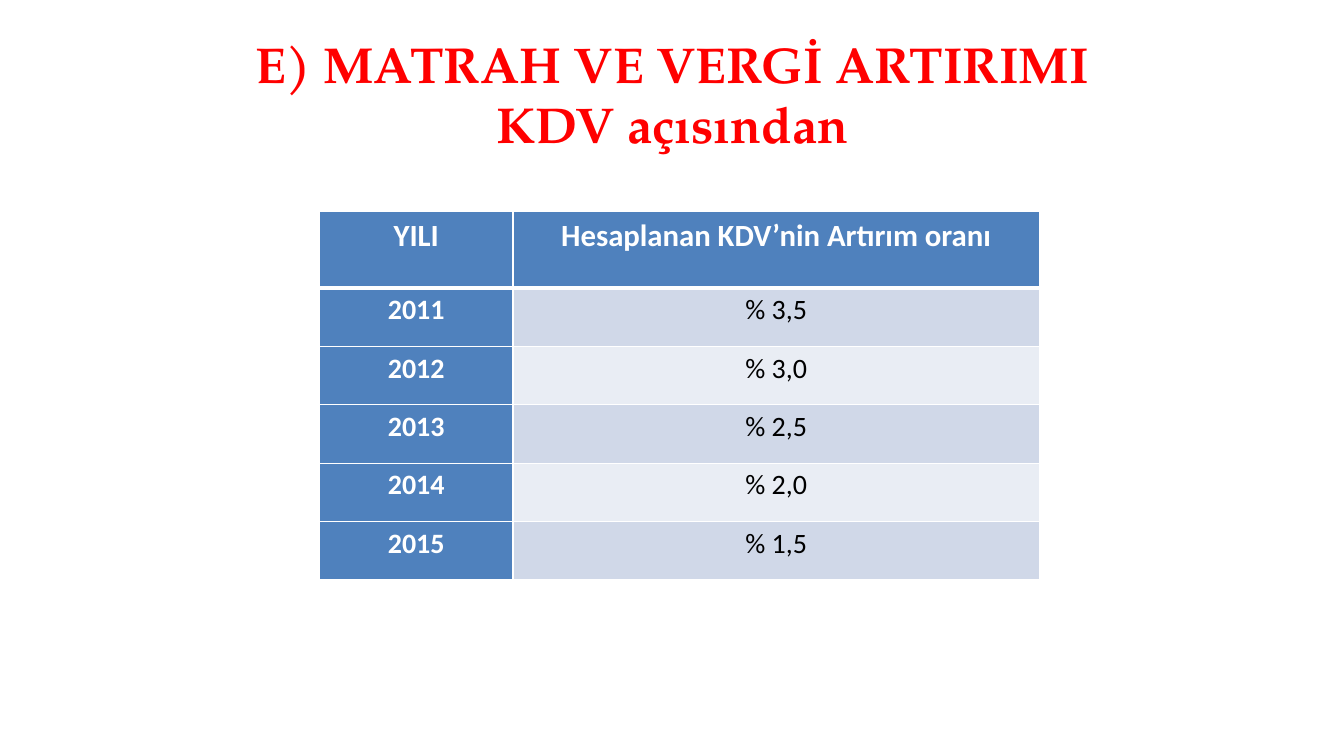
import pptx
import pptx.dml.color
import pptx.enum.text
import pptx.oxml
import pptx.oxml.ns
import pptx.util

Cm = pptx.util.Cm
Pt = pptx.util.Pt
CENTER = pptx.enum.text.PP_ALIGN.CENTER
WHITE, BLUE = "FFFFFF", "4F81BD"
BANDS = ["D0D8E8", "E9EDF4"]


def color(code):
    return pptx.dml.color.RGBColor.from_string(code)


def border(cell, side, width):
    """Draw a white line on one side (L, R, T or B); call before setting the fill."""
    cell._tc.get_or_add_tcPr().append(pptx.oxml.parse_xml(
        f'<a:ln{side} {pptx.oxml.ns.nsdecls("a")} w="{Pt(width)}">'
        f'<a:solidFill><a:srgbClr val="{WHITE}"/></a:solidFill></a:ln{side}>'))


deck = pptx.Presentation()
deck.slide_width, deck.slide_height = Cm(33.87), Cm(19.05)
slide = deck.slides.add_slide(deck.slide_layouts[5])

title = slide.shapes.title
title.left, title.top, title.width, title.height = Cm(1.7), Cm(0.76), Cm(30.48), Cm(3.18)
title.text_frame.vertical_anchor = pptx.enum.text.MSO_ANCHOR.MIDDLE
title.text_frame.text = "E) MATRAH VE VERGİ ARTIRIMI\vKDV açısından"
head = title.text_frame.paragraphs[0]
head.alignment = CENTER
head.font.name, head.font.size, head.font.bold = "TeX Gyre Pagella", Pt(36), True
head.font.color.rgb = color("FF0000")

rates = [
    ("YILI", "Hesaplanan KDV’nin Artırım oranı"),
    ("2011", "% 3,5"),
    ("2012", "% 3,0"),
    ("2013", "% 2,5"),
    ("2014", "% 2,0"),
    ("2015", "% 1,5"),
]
table = slide.shapes.add_table(
    len(rates), 2, Cm(8.05), Cm(5.33), Cm(18.14), Cm(9.25)).table
table.first_col = True
table.columns[0].width, table.columns[1].width = Cm(4.88), Cm(13.26)

for r, row in enumerate(rates):
    table.rows[r].height = Cm(1.93 if r == 0 else 1.47)
    for c, text in enumerate(row):
        cell = table.cell(r, c)
        label = r == 0 or c == 0
        border(cell, "L", 1)
        border(cell, "R", 1)
        border(cell, "T", 3 if r == 1 else 1)
        border(cell, "B", 3 if r == 0 else 1)
        cell.fill.solid()
        cell.fill.fore_color.rgb = color(BLUE if label else BANDS[(r - 1) % 2])
        cell.margin_left = cell.margin_right = Cm(0.18)
        cell.margin_top = cell.margin_bottom = 0
        cell.text = text
        para = cell.text_frame.paragraphs[0]
        para.alignment = CENTER
        para.line_spacing, para.space_after = 1.15, Pt(11.2)
        para.font.name, para.font.size = "Calibri", Pt(22 if r == 0 else 20)
        para.font.bold = label
        para.font.color.rgb = color(WHITE if label else "000000")

deck.save("out.pptx")
